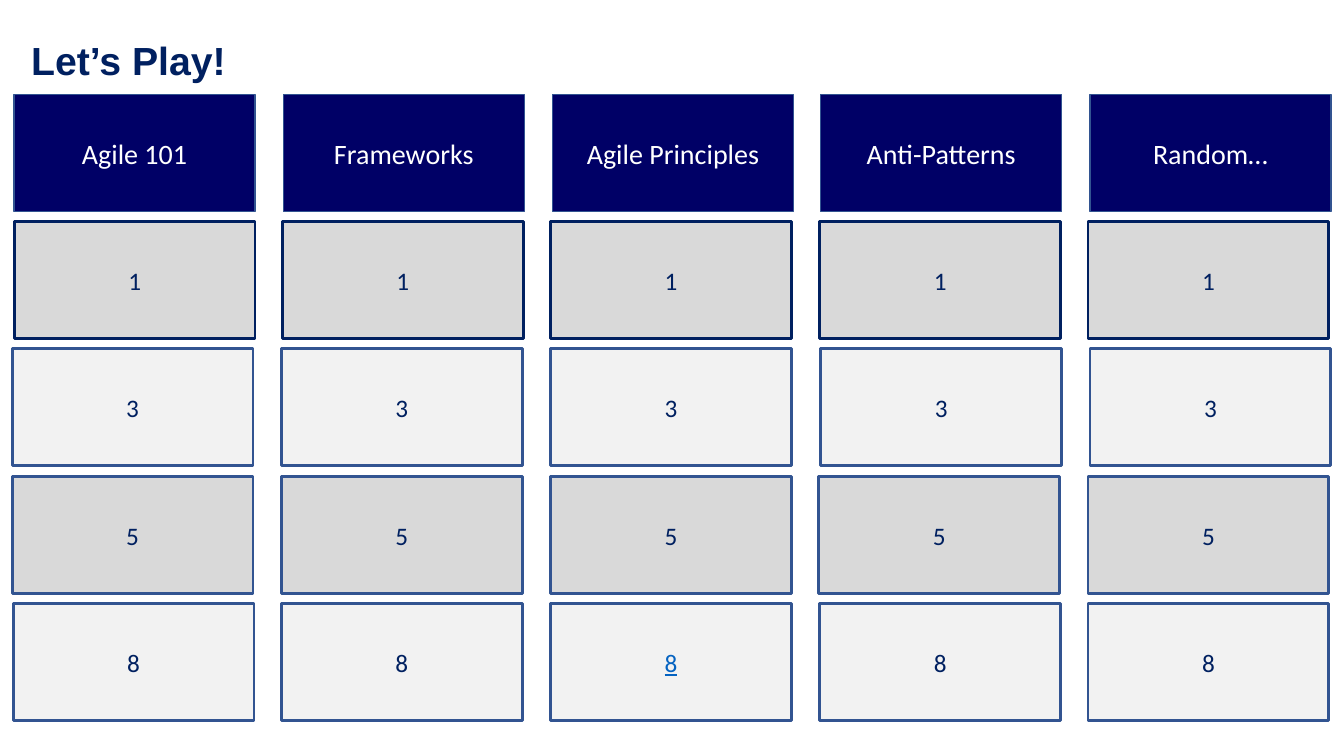
from pptx import Presentation
from pptx import util as u
from pptx.dml import color
from pptx.enum import shapes, text

COLOURS = {
    "header": "000066",
    "grey": "D9D9D9",
    "pale": "F2F2F2",
    "border": "325491",
    "navy": "002060",
    "link": "0563C1",
    "white": "FFFFFF",
}
PX = 9144
COLUMNS = 5
CARD_WIDTH, CARD_HEIGHT = 239, 116
FIRST_TOP, LAST_TOP = 94, 599

TOPICS = ["Agile 101", "Frameworks", "Agile Principles", "Anti-Patterns", "Random…"]
ROWS = [
    (TOPICS, 14, 1081, "header", "border", 1, 20, "white"),
    (["1"] * COLUMNS, 14, 1079, "grey", "navy", 2, 18, "navy"),
    (["3"] * COLUMNS, 12, 1081, "pale", "border", 2, 18, "navy"),
    (["5"] * COLUMNS, 12, 1079, "grey", "border", 2, 18, "navy"),
    (["8"] * COLUMNS, 13, 1079, "pale", "border", 2, 18, "navy"),
]
LINKED_CARD = (4, 2)


def rgb(name):
    return color.RGBColor.from_string(COLOURS[name])


def spread(first, last, index, count):
    return first + round((last - first) * index / (count - 1))


def write(shape, words, *, size, colour, font="Calibri", bold=False,
          underline=False, align=text.PP_ALIGN.CENTER, spacing=1.0):
    frame = shape.text_frame
    frame.word_wrap = True
    frame.auto_size = text.MSO_AUTO_SIZE.NONE
    frame.vertical_anchor = text.MSO_ANCHOR.MIDDLE
    para = frame.paragraphs[0]
    para.alignment = align
    para.line_spacing = spacing
    span = para.add_run()
    span.text = words
    span.font.name = font
    span.font.size = u.Pt(size)
    span.font.bold = bold
    span.font.underline = underline
    span.font.color.rgb = rgb(colour)


class Board:
    def __init__(self, deck):
        self.page = deck.slides.add_slide(deck.slide_layouts[5])

    def title(self, words, left, top, width, height):
        box = self.page.shapes.title
        box.left, box.top = left * PX, top * PX
        box.width, box.height = width * PX, height * PX
        write(box, words, size=28, colour="navy", font="Arial", bold=True,
              align=text.PP_ALIGN.LEFT, spacing=0.9)

    def card(self, words, left, top, fill, border, weight, **style):
        box = self.page.shapes.add_shape(
            shapes.MSO_SHAPE.RECTANGLE,
            left * PX, top * PX, CARD_WIDTH * PX, CARD_HEIGHT * PX)
        box.shadow.inherit = False
        box.fill.solid()
        box.fill.fore_color.rgb = rgb(fill)
        box.line.color.rgb = rgb(border)
        box.line.width = u.Pt(weight)
        write(box, words, **style)


def main():
    deck = Presentation()
    deck.slide_width, deck.slide_height = 1333 * PX, 750 * PX
    board = Board(deck)
    board.title("Let’s Play!", 21, 15, 917, 95)
    for row, (labels, first, last, fill, border, weight, size, ink) in enumerate(ROWS):
        top = spread(FIRST_TOP, LAST_TOP, row, len(ROWS))
        for column, label in enumerate(labels):
            linked = (row, column) == LINKED_CARD
            board.card(label, spread(first, last, column, COLUMNS), top,
                       fill, border, weight, size=size,
                       colour="link" if linked else ink, underline=linked)
    deck.save("out.pptx")


if __name__ == "__main__":
    main()
